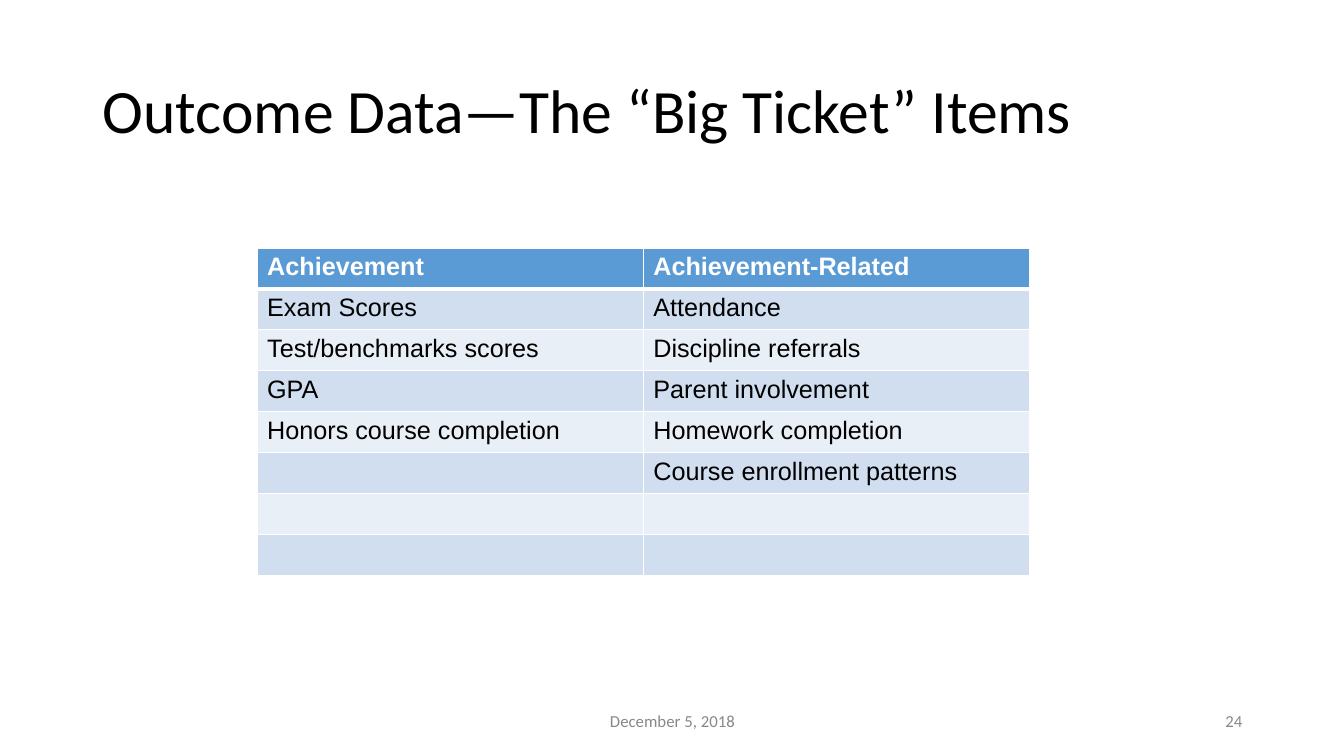
from lxml.etree import SubElement
from pptx import Presentation
from pptx.dml.color import RGBColor
from pptx.enum.text import MSO_ANCHOR, PP_ALIGN
from pptx.oxml.ns import qn
from pptx.util import Inches, Pt

# Content
TITLE = "Outcome Data—The “Big Ticket” Items"
ROWS = [
    ("Achievement", "Achievement-Related"),
    ("Exam Scores", "Attendance"),
    ("Test/benchmarks scores", "Discipline referrals"),
    ("GPA", "Parent involvement"),
    ("Honors course completion", "Homework completion"),
    ("", "Course enrollment patterns"),
    ("", ""),
    ("", ""),
]
# Footer text, left, width, alignment
FOOTERS = [
    ("December 5, 2018", 4.42, 4.5, PP_ALIGN.CENTER),
    ("24", 9.42, 3, PP_ALIGN.RIGHT),
]

# Colours and sizes
BLACK = RGBColor(0x00, 0x00, 0x00)
WHITE = RGBColor(0xFF, 0xFF, 0xFF)
GREY = RGBColor(0x88, 0x88, 0x88)
HEADER_BLUE = RGBColor(0x5B, 0x9B, 0xD5)
BANDS = (RGBColor(0xE9, 0xEF, 0xF7), RGBColor(0xD0, 0xDE, 0xEF))
COLUMN_WIDTH, TABLE_HEIGHT = 3.83, 3.25


def set_font(paragraph, name, size, color, bold=False):
    font = paragraph.font
    font.name, font.size, font.bold = name, Pt(size), bold
    font.color.rgb = color


def set_borders(cell, bottom_width):
    properties = cell._tc.get_or_add_tcPr()
    for side, width in (("L", 1), ("R", 1), ("T", 1), ("B", bottom_width)):
        line = SubElement(properties, qn(f"a:ln{side}"), w=str(Pt(width)))
        fill = SubElement(line, qn("a:solidFill"))
        SubElement(fill, qn("a:srgbClr"), val=str(WHITE))


presentation = Presentation()
presentation.slide_width = Inches(13.33)
presentation.slide_height = Inches(7.5)
slide = presentation.slides.add_slide(presentation.slide_layouts[5])

# Title
title = slide.shapes.title
title.left, title.top = Inches(0.92), Inches(0.4)
title.width, title.height = Inches(11.5), Inches(1.45)
title.text_frame.text = TITLE
title.text_frame.vertical_anchor = MSO_ANCHOR.MIDDLE
paragraph = title.text_frame.paragraphs[0]
paragraph.alignment = PP_ALIGN.LEFT
paragraph.line_spacing = 0.9
set_font(paragraph, "Calibri", 44, BLACK)

# Table
column_count = len(ROWS[0])
table = slide.shapes.add_table(
    len(ROWS), column_count, Inches(2.55), Inches(2.46),
    Inches(COLUMN_WIDTH * column_count), Inches(TABLE_HEIGHT),
).table
for row_index, texts in enumerate(ROWS):
    is_header = row_index == 0
    for column_index, text in enumerate(texts):
        cell = table.cell(row_index, column_index)
        set_borders(cell, 3 if is_header else 1)
        cell.fill.solid()
        cell.fill.fore_color.rgb = HEADER_BLUE if is_header else BANDS[row_index % 2]
        cell.text = text
        set_font(cell.text_frame.paragraphs[0], "Arial", 18,
                 WHITE if is_header else BLACK, is_header)

# Date and slide number
for text, left, width, alignment in FOOTERS:
    box = slide.shapes.add_textbox(Inches(left), Inches(6.95), Inches(width), Inches(0.4))
    frame = box.text_frame
    frame.word_wrap = True
    frame.vertical_anchor = MSO_ANCHOR.MIDDLE
    frame.text = text
    frame.paragraphs[0].alignment = alignment
    set_font(frame.paragraphs[0], "Calibri", 12, GREY)

presentation.save("out.pptx")
